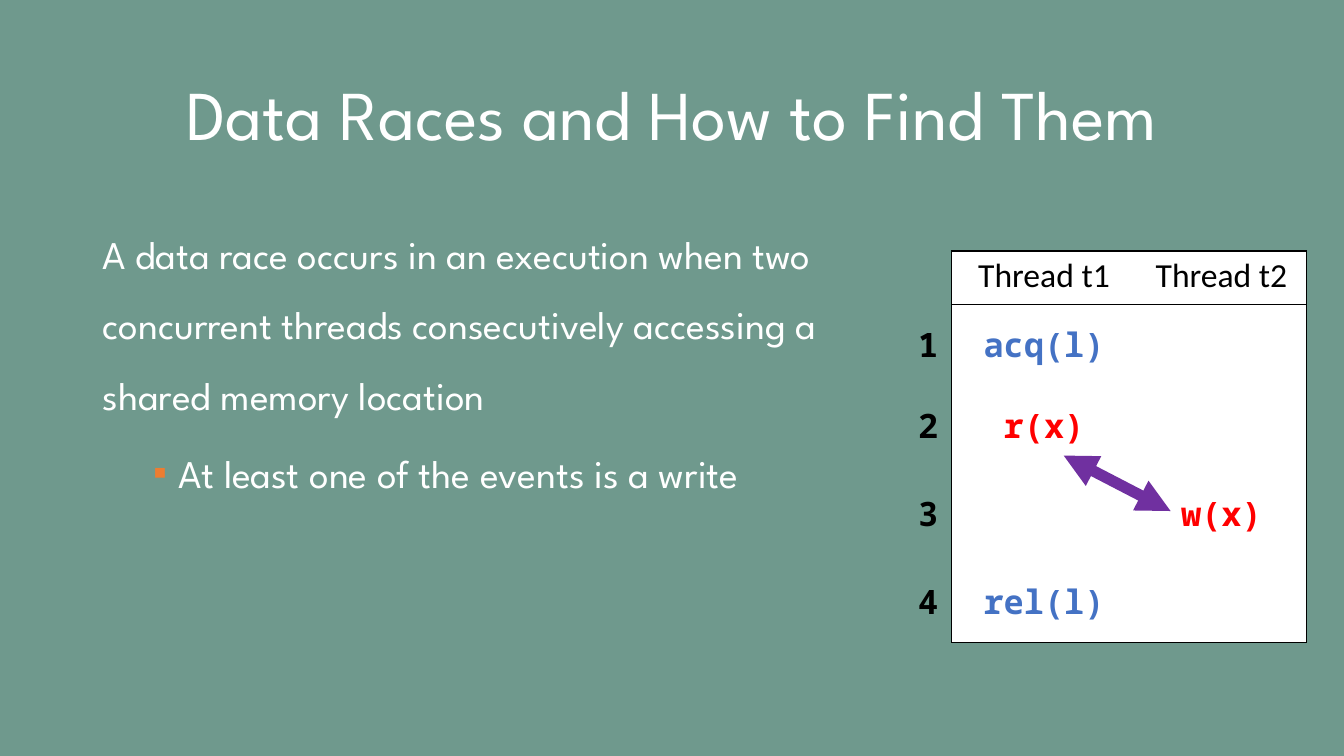
"""Builds a slide that defines a data race and shows one in a two-thread trace."""
from dataclasses import dataclass

from pptx import Presentation
from pptx.dml.color import RGBColor
from pptx.enum.shapes import MSO_CONNECTOR
from pptx.enum.text import MSO_ANCHOR, PP_ALIGN
from pptx.oxml.ns import qn
from pptx.util import Inches, Pt
from lxml.etree import SubElement

TITLE = "Data Races and How to Find Them"
DEFINITION = ("A data race occurs in an execution when two concurrent threads "
              "consecutively accessing a shared memory location")
CONDITION = "At least one of the events is a write"
TRACE = [
    ("", "Thread t1", "Thread t2"),
    ("1", "acq(l)", ""),
    ("2", "r(x)", ""),
    ("3", "", "w(x)"),
    ("4", "rel(l)", ""),
]
COL_WIDTHS = (0.47, 1.83, 1.69)
ROW_HEIGHTS = (0.53, 0.8, 0.8, 0.95, 0.8)
TABLE_AT = (8.97, 2.49)
RACE_FROM, RACE_TO = (10.55, 4.52), (11.61, 5.07)


@dataclass(frozen=True)
class Theme:
    back: str = "6F998D"
    light: str = "FFFFFF"
    dark: str = "000000"
    lock: str = "4472C4"
    access: str = "FF0000"
    arrow: str = "7030A0"
    bullet: str = "ED7D31"
    text_font: str = "League Spartan"
    head_font: str = "Calibri"
    code_font: str = "Noto Sans Mono"
    title_size: int = 50
    body_size: int = 28
    table_size: int = 24


THEME = Theme()


def rgb(color):
    return RGBColor.from_string(color)


def style(p, font, size, color, bold=False):
    for r in p.runs:
        r.font.name, r.font.size, r.font.bold = font, Pt(size), bold
        r.font.color.rgb = rgb(color)


def add_text(slide, box, paragraphs, size):
    tf = slide.shapes.add_textbox(*map(Inches, box)).text_frame
    tf.word_wrap = True
    tf.text = "\n".join(paragraphs)
    for p in tf.paragraphs:
        style(p, THEME.text_font, size, THEME.light)
    return tf


def add_bullet(p, char, color):
    pPr = p._p.get_or_add_pPr()
    pPr.set("marL", str(Inches(0.75)))
    pPr.set("indent", str(Inches(-0.25)))
    SubElement(SubElement(pPr, qn("a:buClr")), qn("a:srgbClr"), val=color)
    SubElement(pPr, qn("a:buFont"), typeface="Arial")
    SubElement(pPr, qn("a:buChar"), char=char)


def set_borders(cell, drawn):
    tcPr = cell._tc.get_or_add_tcPr()
    for side in "LRTB":
        ln = SubElement(tcPr, qn("a:ln" + side), w=str(Pt(1)))
        if side in drawn:
            fill = SubElement(ln, qn("a:solidFill"))
            SubElement(fill, qn("a:srgbClr"), val=THEME.dark)
        else:
            SubElement(ln, qn("a:noFill"))


def borders_of(row, col):
    if col == 0:
        return "R"
    last = len(TRACE) - 1
    edges = {"L": col == 1, "R": col == 2, "T": row <= 1, "B": row in (0, last)}
    return [side for side, drawn in edges.items() if drawn]


def color_of(text):
    if text.startswith(("acq", "rel")):
        return THEME.lock
    return THEME.access if "(x)" in text else THEME.dark


def add_trace(slide):
    size = (sum(COL_WIDTHS), sum(ROW_HEIGHTS))
    table = slide.shapes.add_table(len(TRACE), len(COL_WIDTHS),
                                   *map(Inches, TABLE_AT + size)).table
    table.first_row = table.horz_banding = False
    for column, width in zip(table.columns, COL_WIDTHS):
        column.width = Inches(width)
    for i, (row, height) in enumerate(zip(TRACE, ROW_HEIGHTS)):
        table.rows[i].height = Inches(height)
        for j, text in enumerate(row):
            cell = table.cell(i, j)
            set_borders(cell, borders_of(i, j))
            if j:
                cell.fill.solid()
                cell.fill.fore_color.rgb = rgb(THEME.light)
            else:
                cell.fill.background()
            cell.vertical_anchor = MSO_ANCHOR.MIDDLE if i else MSO_ANCHOR.TOP
            p = cell.text_frame.paragraphs[0]
            p.alignment = PP_ALIGN.CENTER
            if text:
                p.text = text
                font = THEME.code_font if i else THEME.head_font
                style(p, font, THEME.table_size, color_of(text), i > 0)


def add_race_arrow(slide):
    sp = slide.shapes.add_connector(MSO_CONNECTOR.STRAIGHT,
                                    *map(Inches, RACE_FROM + RACE_TO))
    sp.line.color.rgb = rgb(THEME.arrow)
    sp.line.width = Pt(8)
    ln = sp.line._get_or_add_ln()
    for end in ("a:headEnd", "a:tailEnd"):
        SubElement(ln, qn(end), type="triangle")
    SubElement(sp._element.spPr, qn("a:effectLst"))


def main():
    prs = Presentation()
    prs.slide_width, prs.slide_height = Inches(13.33), Inches(7.5)
    slide = prs.slides.add_slide(prs.slide_layouts[6])
    slide.background.fill.solid()
    slide.background.fill.fore_color.rgb = rgb(THEME.back)

    add_trace(slide)
    add_race_arrow(slide)

    tf = add_text(slide, (0.92, 0.44, 11.5, 1.45), [TITLE], THEME.title_size)
    tf.vertical_anchor = MSO_ANCHOR.MIDDLE
    tf.paragraphs[0].alignment = PP_ALIGN.CENTER
    tf.paragraphs[0].line_spacing = 0.9

    tf = add_text(slide, (0.92, 2, 8.05, 4.76), [DEFINITION, CONDITION],
                  THEME.body_size)
    for p, space in zip(tf.paragraphs, (10, 5)):
        p.line_spacing, p.space_before = 1.5, Pt(space)
    tf.paragraphs[1].level = 1
    add_bullet(tf.paragraphs[1], "▪", THEME.bullet)

    prs.save("out.pptx")


if __name__ == "__main__":
    main()
